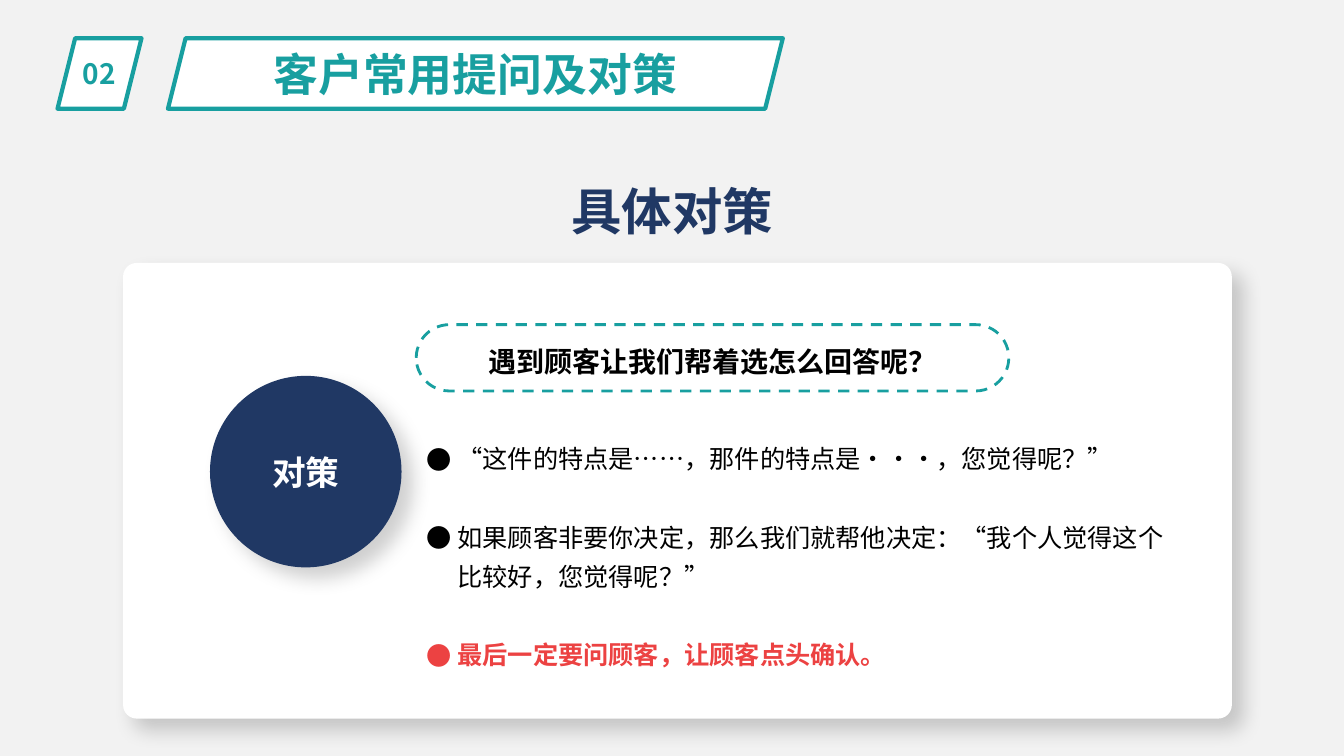
from lxml import etree
from pptx import Presentation
from pptx.dml.color import RGBColor
from pptx.enum.dml import MSO_LINE
from pptx.enum.shapes import MSO_SHAPE
from pptx.enum.text import MSO_ANCHOR, MSO_AUTO_SIZE, PP_ALIGN
from pptx.oxml.ns import qn
from pptx.util import Inches, Pt

PARALLELOGRAM = MSO_SHAPE.PARALLELOGRAM
ROUNDED = MSO_SHAPE.ROUNDED_RECTANGLE
OVAL = MSO_SHAPE.OVAL
DASH = MSO_LINE.DASH
CENTER, LEFT = PP_ALIGN.CENTER, PP_ALIGN.LEFT
MIDDLE, TOP = MSO_ANCHOR.MIDDLE, MSO_ANCHOR.TOP
NO_AUTOFIT = MSO_AUTO_SIZE.NONE

TEAL = RGBColor(0x18, 0x9F, 0xA0)
NAVY = RGBColor(0x20, 0x38, 0x64)
RED = RGBColor(0xEC, 0x42, 0x42)
BLACK = RGBColor(0, 0, 0)
WHITE = RGBColor(0xFF, 0xFF, 0xFF)
PALE_GREY = RGBColor(0xF2, 0xF2, 0xF2)

FONT = "Noto Sans CJK SC"
SLIDE_WIDTH, SLIDE_HEIGHT = Inches(13.33), Inches(7.5)
COLUMN, ROW = SLIDE_WIDTH / 160, SLIDE_HEIGHT / 90

BANNER_TOP, BANNER_ROWS = 4.55, 8.4
BANNER_BOX = (20, BANNER_TOP, 73.2, BANNER_ROWS)
TEXT_LEFT = 49.55

ANSWERS = [
    ("“这件的特点是……，那件的特点是···，您觉得呢？”", BLACK, False),
    ("如果顾客非要你决定，那么我们就帮他决定：“我个人觉得这个比较好，您觉得呢？”", BLACK, False),
    ("最后一定要问顾客，让顾客点头确认。", RED, True),
]


def grid(left, top, columns, rows):
    """Turn grid columns and rows into slide lengths."""
    return [int(length) for length in
            (left * COLUMN, top * ROW, columns * COLUMN, rows * ROW)]


def add_run(paragraph, text, size, color, bold=True):
    run = paragraph.add_run()
    run.text = text
    font = run.font
    font.name, font.size, font.bold = FONT, Pt(size), bold
    font.color.rgb = color
    properties = font._element
    properties.set("lang", "zh-CN")
    etree.SubElement(properties, qn("a:ea"), typeface=FONT)


def add_centred_text(shape, text, size, color, spacing=1.0):
    frame = shape.text_frame
    frame.word_wrap = True
    frame.auto_size = NO_AUTOFIT
    frame.vertical_anchor = MIDDLE
    frame.margin_left = frame.margin_right = 0
    paragraph = frame.paragraphs[0]
    paragraph.alignment = CENTER
    paragraph.line_spacing = spacing
    add_run(paragraph, text, size, color)


def add_panel(slide, kind, box, fill=None, line=None, line_width=3):
    shape = slide.shapes.add_shape(kind, *grid(*box))
    shape.shadow.inherit = False
    if fill is None:
        shape.fill.background()
    else:
        shape.fill.solid()
        shape.fill.fore_color.rgb = fill
    if line is None:
        shape.line.fill.background()
    else:
        shape.line.color.rgb = line
        shape.line.width = Pt(line_width)
    return shape


def add_soft_shadow(shape):
    effects = shape._element.spPr.find(qn("a:effectLst"))
    shadow = etree.SubElement(
        effects, qn("a:outerShdw"), blurRad=str(Pt(14)), dist=str(Pt(11)),
        dir="2700000", algn="tl", rotWithShape="0")
    color = etree.SubElement(shadow, qn("a:srgbClr"), val=str(BLACK))
    etree.SubElement(color, qn("a:alpha"), val="18000")


def place_in_front(slide, placeholder, box):
    """Move a placeholder to its grid box, above the panels drawn so far."""
    (placeholder.left, placeholder.top,
     placeholder.width, placeholder.height) = grid(*box)
    slide.shapes._spTree.append(placeholder._element)


def add_bullet(paragraph):
    properties = paragraph._p.get_or_add_pPr()
    indent = Inches(0.31)
    properties.set("marL", str(indent))
    properties.set("indent", str(-indent))
    etree.SubElement(properties, qn("a:buFont"), typeface=FONT)
    etree.SubElement(properties, qn("a:buChar"), char="●")


def fill_answers(body):
    frame = body.text_frame
    frame.word_wrap = True
    frame.auto_size = NO_AUTOFIT
    frame.vertical_anchor = TOP
    for index, (text, color, bold) in enumerate(ANSWERS):
        paragraph = frame.add_paragraph() if index else frame.paragraphs[0]
        paragraph.alignment = LEFT
        paragraph.line_spacing = 1.3
        paragraph.space_before = Pt(28 if index else 0)
        add_bullet(paragraph)
        add_run(paragraph, text, 18, color, bold)


def main():
    presentation = Presentation()
    presentation.slide_width, presentation.slide_height = SLIDE_WIDTH, SLIDE_HEIGHT
    slide = presentation.slides.add_slide(presentation.slide_layouts[1])
    slide.background.fill.solid()
    slide.background.fill.fore_color.rgb = PALE_GREY
    title, body = slide.placeholders

    number = add_panel(slide, PARALLELOGRAM, (6.85, BANNER_TOP, 10, BANNER_ROWS),
                       WHITE, TEAL)
    add_centred_text(number, "02", 20, TEAL)
    add_panel(slide, PARALLELOGRAM, BANNER_BOX, WHITE, TEAL)
    place_in_front(slide, title, BANNER_BOX)
    add_centred_text(title, "客户常用提问及对策", 32, TEAL)

    card = add_panel(slide, ROUNDED, (14.65, 31.3, 132, 54.25), WHITE)
    card.adjustments[0] = 0.03
    add_soft_shadow(card)

    circle = add_panel(slide, OVAL, (25, 44.75, 22.8, 22.8), NAVY)
    add_soft_shadow(circle)
    add_centred_text(circle, "对策", 24, WHITE)

    heading = slide.shapes.add_textbox(*grid(8.75, 21, 142.5, 8.15))
    add_centred_text(heading, "具体对策", 36, NAVY)

    place_in_front(slide, body, (TEXT_LEFT, 51.1, 91.7, 29.5))
    fill_answers(body)

    question = add_panel(slide, ROUNDED, (TEXT_LEFT, 38.65, 70.55, 7.9),
                         line=TEAL, line_width=2)
    question.adjustments[0] = 0.5
    question.line.dash_style = DASH
    add_centred_text(question, "遇到顾客让我们帮着选怎么回答呢？", 20, BLACK, 1.2)

    presentation.save("out.pptx")


if __name__ == "__main__":
    main()
